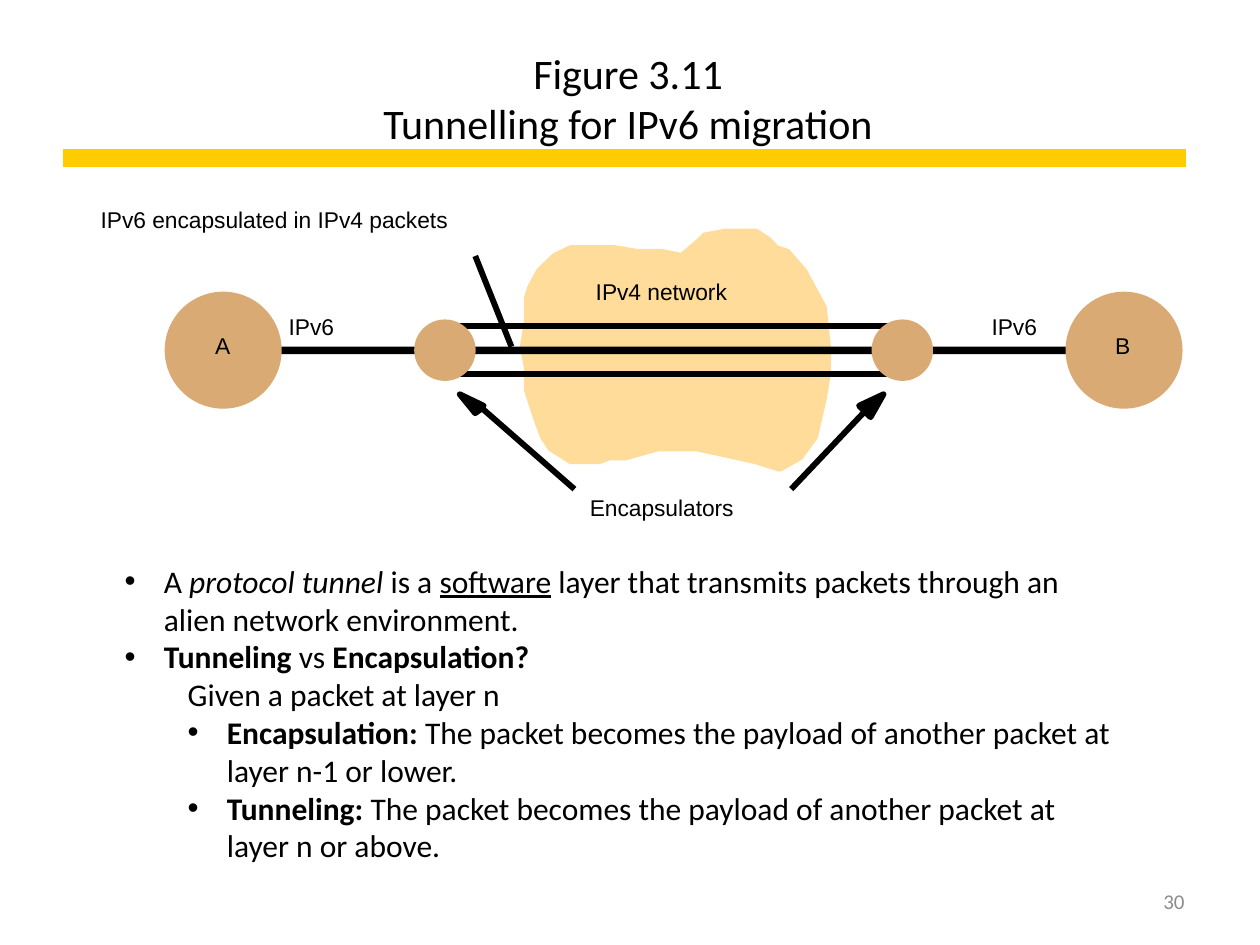
from lxml import etree
from pptx import Presentation
from pptx import util as u
from pptx.dml.color import RGBColor
from pptx.enum import shapes, text
from pptx.oxml import ns

BLACK = RGBColor(0x00, 0x00, 0x00)
GREY = RGBColor(0x8C, 0x8C, 0x8C)
GOLD = RGBColor(0xFF, 0xCC, 0x00)
TAN = RGBColor(0xD9, 0xAA, 0x73)
PEACH = RGBColor(0xFF, 0xDC, 0x99)

# Diagram measures and outlines in centimetres
AXIS_Y = 7.06
HOSTS = {"A": (4.5, 4.34), "B": (22.66, 22.48)}  # centre x, label x
ENCAPSULATORS = (8.97, 18.19)
TUNNEL_WALLS = (6.58, 7.54)
CLOUD = [
    (10.69, 5.79), (10.87, 5.46), (11.18, 5.16), (11.51, 5), (12.37, 5),
    (12.85, 5.08), (13.34, 5.08), (13.74, 5.16), (14.05, 4.9), (14.2, 4.75),
    (14.61, 4.67), (15.24, 4.67), (15.49, 4.83), (15.65, 5), (15.88, 5.08),
    (16.21, 5.46), (16.61, 6.2), (16.69, 6.99), (16.69, 7.54), (16.61, 8.03),
    (16.43, 8.81), (16.13, 9.22), (15.72, 9.45), (15.24, 9.3), (14.05, 9.04),
    (13.26, 9.04), (12.62, 9.22), (12.29, 9.22), (12.07, 9.3), (11.51, 9.3),
    (11.1, 9.04), (10.95, 8.81), (10.8, 8.41), (10.62, 7.85), (10.62, 7.39),
    (10.54, 6.99), (10.62, 6.5), (10.62, 6.02),
]
# Each pointer: outline of its head, then the two ends of its shaft
POINTERS = [
    ([(9.68, 8.26), (9.58, 8.33), (9.27, 7.95), (9.75, 8.18)],
     (9.75, 8.26), (11.58, 9.86)),
    ([(17.4, 8.26), (17.32, 8.18), (17.81, 7.95), (17.55, 8.41)],
     (17.4, 8.33), (15.95, 9.86)),
]
LABELS = [
    ("IPv6", 5.82, 6.3, 1.35),
    ("IPv6", 19.99, 6.3, 1.35),
    ("IPv6 encapsulated in IPv4 packets", 2.03, 4.14, 10.03),
    ("Encapsulators", 11.89, 9.96, 4.19),
    ("IPv4 network", 12.01, 5.59, 3.81),
]

BOLD, ITALIC, UNDERLINE = {"bold": True}, {"italic": True}, {"underline": True}
# Each item: level, left margin, bulleted, runs
BODY = [
    (0, 0.79, True, [
        ("A ", {}), ("protocol tunnel", ITALIC), (" is a ", {}),
        ("software", UNDERLINE),
        (" layer that transmits packets through an alien network environment.", {})]),
    (0, 0.79, True, [("Tunneling ", BOLD), ("vs ", {}), ("Encapsulation?", BOLD)]),
    (0, 1.27, False, [("Given a packet at layer n", {})]),
    (1, 2.06, True, [
        ("Encapsulation: ", BOLD),
        ("The packet becomes the payload of another packet at layer n-1 or lower.", {})]),
    (1, 2.06, True, [
        ("Tunneling: ", BOLD),
        ("The packet becomes the payload of another packet at layer n or above.", {})]),
]


def write(para, words, size=13, font="Arial", color=BLACK, **flags):
    """Add a run to a paragraph; flags are bold, italic and underline."""
    span = para.add_run()
    span.text = words
    span.font.size = u.Pt(size)
    span.font.name = font
    span.font.color.rgb = color
    for name, value in flags.items():
        setattr(span.font, name, value)


def set_bullet(para, margin, bulleted):
    """Set the left margin and either a hanging round bullet or none."""
    props = para._p.get_or_add_pPr()
    props.set("marL", str(u.Cm(margin)))
    props.set("indent", str(u.Cm(-0.79) if bulleted else 0))
    if bulleted:
        etree.SubElement(props, ns.qn("a:buFont")).set("typeface", "Arial")
        etree.SubElement(props, ns.qn("a:buChar")).set("char", "•")
    else:
        etree.SubElement(props, ns.qn("a:buNone"))


def place(box, left, top, width, height):
    box.left, box.top = u.Cm(left), u.Cm(top)
    box.width, box.height = u.Cm(width), u.Cm(height)


class Painter:
    def __init__(self, slide, line_width=3.38):
        self.slide = slide
        self.line_width = u.Pt(line_width)

    def paint(self, shape, color, outlined=True):
        shape.shadow.inherit = False
        shape.fill.solid()
        shape.fill.fore_color.rgb = color
        if outlined:
            shape.line.color.rgb = color
            shape.line.width = self.line_width
        else:
            shape.line.fill.background()

    def line(self, start, end, color=BLACK, width=None):
        link = self.slide.shapes.add_connector(
            shapes.MSO_CONNECTOR.STRAIGHT, *map(u.Cm, start + end))
        link.line.color.rgb = color
        link.line.width = width or self.line_width
        etree.SubElement(link._element.spPr, ns.qn("a:effectLst"))

    def outline(self, points, color):
        corners = [(u.Cm(x), u.Cm(y)) for x, y in points]
        builder = self.slide.shapes.build_freeform(*corners[0])
        builder.add_line_segments(corners[1:], close=True)
        self.paint(builder.convert_to_shape(), color)

    def disc(self, center_x, diameter):
        disc = self.slide.shapes.add_shape(
            shapes.MSO_SHAPE.OVAL, u.Cm(center_x - diameter / 2),
            u.Cm(AXIS_Y - diameter / 2), u.Cm(diameter), u.Cm(diameter))
        self.paint(disc, TAN)

    def bar(self, left, top, width, height):
        bar = self.slide.shapes.add_shape(
            shapes.MSO_SHAPE.RECTANGLE, *map(u.Cm, (left, top, width, height)))
        self.paint(bar, BLACK, outlined=False)

    def label(self, words, left, top, width, height=0.71):
        box = self.slide.shapes.add_textbox(*map(u.Cm, (left, top, width, height)))
        frame = box.text_frame
        frame.word_wrap = True
        frame.margin_left = frame.margin_right = 0
        frame.margin_top = frame.margin_bottom = 0
        write(frame.paragraphs[0], words)

    def title(self, first, second):
        box = self.slide.shapes.title
        place(box, 1.27, 0.76, 22.86, 2.41)
        frame = box.text_frame
        frame.margin_right = u.Cm(0.33)
        frame.vertical_anchor = text.MSO_ANCHOR.MIDDLE
        para = frame.paragraphs[0]
        para.alignment = text.PP_ALIGN.CENTER
        write(para, first, size=24, font="Calibri")
        para.add_line_break()
        write(para, second, size=24, font="Calibri")

    def body(self, items):
        box = self.slide.placeholders[1]
        place(box, 2.26, 11.2, 20.62, 6.4)
        frame = box.text_frame
        frame.auto_size = text.MSO_AUTO_SIZE.SHAPE_TO_FIT_TEXT
        for index, (level, margin, bulleted, runs) in enumerate(items):
            para = frame.add_paragraph() if index else frame.paragraphs[0]
            para.level = level
            para.space_before = u.Pt(0)
            set_bullet(para, margin, bulleted)
            for words, flags in runs:
                write(para, words, size=18, font="Calibri", **flags)

    def page_number(self, number):
        box = self.slide.shapes.add_textbox(*map(u.Cm, (18.21, 17.65, 5.92, 1.02)))
        frame = box.text_frame
        frame.word_wrap = True
        frame.vertical_anchor = text.MSO_ANCHOR.MIDDLE
        para = frame.paragraphs[0]
        para.alignment = text.PP_ALIGN.RIGHT
        write(para, number, size=12, font="Calibri", color=GREY)


def main():
    deck = Presentation()
    deck.slide_width, deck.slide_height = u.Cm(25.4), u.Cm(19.05)
    painter = Painter(deck.slides.add_slide(deck.slide_layouts[1]))

    painter.line((1.27, 3.18), (23.9, 3.18), GOLD, u.Pt(10))
    painter.title("Figure 3.11", "Tunnelling for IPv6 migration")

    painter.outline(CLOUD, PEACH)
    for y in TUNNEL_WALLS:
        painter.line((9.04, y), (18.29, y))
    painter.bar(5.05, 6.99, 17.3, 0.15)
    for name, (center_x, label_x) in HOSTS.items():
        painter.disc(center_x, 2.24)
        painter.label(name, label_x, 6.68, 0.48)
    for center_x in ENCAPSULATORS:
        painter.disc(center_x, 1.12)
    painter.line((9.58, 5.16), (10.31, 6.99))
    for head, start, end in POINTERS:
        painter.outline(head, BLACK)
        painter.line(start, end)
    for label in LABELS:
        painter.label(*label)

    painter.body(BODY)
    painter.page_number("30")
    deck.save("out.pptx")


if __name__ == "__main__":
    main()
